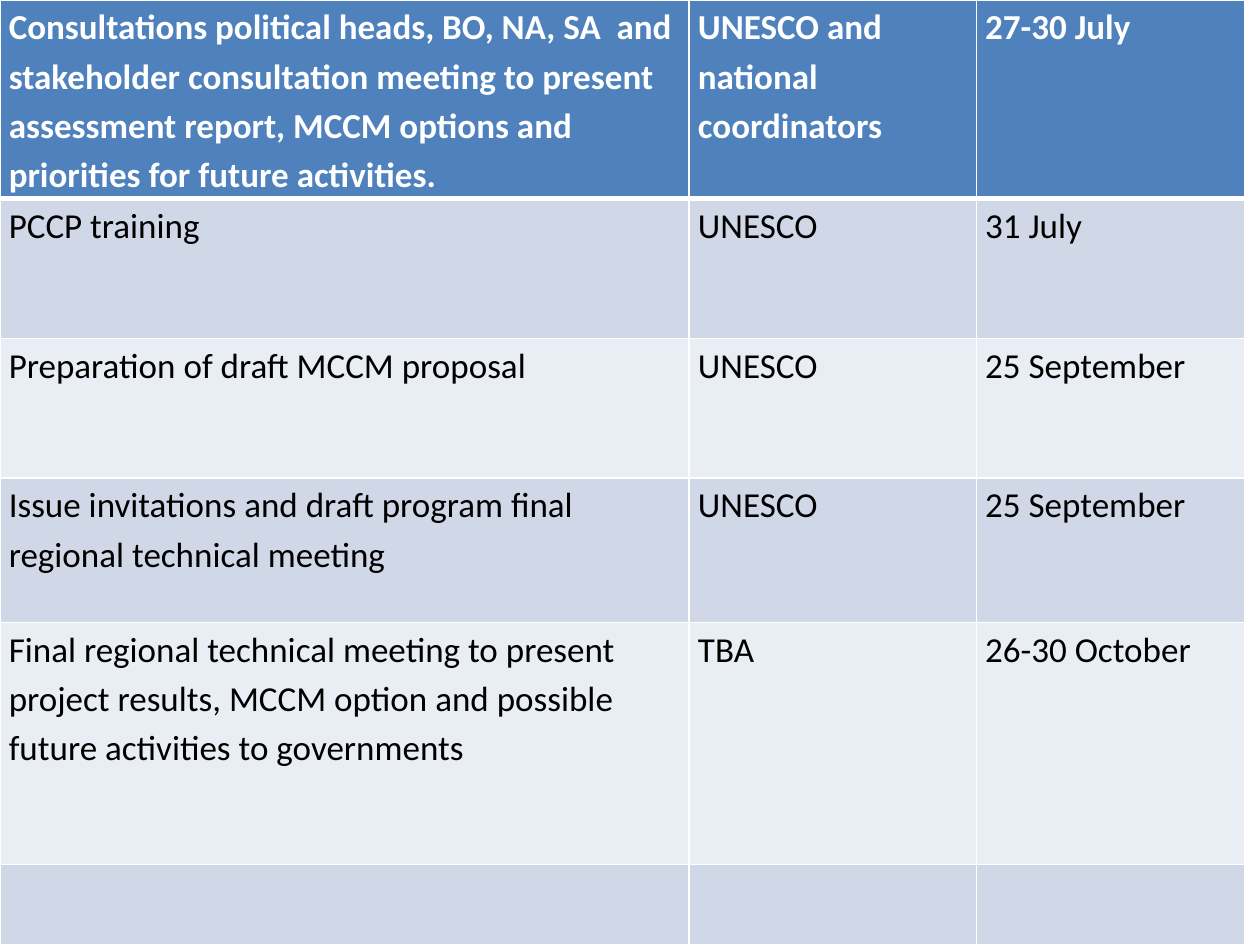
from dataclasses import dataclass

import pptx
import pptx.dml.color
import pptx.oxml
import pptx.oxml.ns
import pptx.table
import pptx.util

RGBColor = pptx.dml.color.RGBColor
WHITE = RGBColor(0xFF, 0xFF, 0xFF)
BLACK = RGBColor(0x00, 0x00, 0x00)
HEADER_BLUE = RGBColor(0x4F, 0x81, 0xBD)
BANDS = (RGBColor(0xD0, 0xD8, 0xE8), RGBColor(0xE9, 0xED, 0xF4))

SLIDE_WIDTH = pptx.util.Inches(10)
SLIDE_HEIGHT = pptx.util.Inches(7.5)
COLUMN_SHARES = (0.547, 0.228, 0.213)
SIDE_MARGIN = pptx.util.Inches(0.07)


@dataclass(frozen=True)
class Activity:
    height_share: float
    task: str = ""
    organiser: str = ""
    date: str = ""


ACTIVITIES = (
    Activity(
        0.21,
        "Consultations political heads, BO, NA, SA  and stakeholder consultation meeting "
        "to present assessment report, MCCM options and priorities for future activities.",
        "UNESCO and national coordinators",
        "27-30 July",
    ),
    Activity(0.148, "PCCP training", "UNESCO", "31 July"),
    Activity(0.148, "Preparation of draft MCCM proposal", "UNESCO", "25 September"),
    Activity(
        0.153,
        "Issue invitations and draft program final regional technical meeting",
        "UNESCO",
        "25 September",
    ),
    Activity(
        0.256,
        "Final regional technical meeting to present project results, MCCM option "
        "and possible future activities to governments",
        "TBA",
        "26-30 October",
    ),
    Activity(0.085),
)


def add_border(cell: pptx.table._Cell, side: str, points: float) -> None:
    properties = cell._tc.get_or_add_tcPr()
    properties.append(pptx.oxml.parse_xml(
        f'<a:ln{side} {pptx.oxml.ns.nsdecls("a")} w="{pptx.util.Pt(points)}">'
        f'<a:solidFill><a:srgbClr val="{WHITE}"/></a:solidFill></a:ln{side}>'
    ))


def format_cell(cell: pptx.table._Cell, text: str, row: int) -> None:
    """Style one cell; row 0 is the header and row 1 has a thick rule above it."""
    is_header = row == 0
    for side in "LRTB":
        thick = (side == "B" and is_header) or (side == "T" and row == 1)
        add_border(cell, side, 3 if thick else 1)
    cell.fill.solid()
    cell.fill.fore_color.rgb = HEADER_BLUE if is_header else BANDS[(row - 1) % 2]
    cell.margin_left = cell.margin_right = SIDE_MARGIN
    cell.margin_top = cell.margin_bottom = 0
    cell.text = text
    para = cell.text_frame.paragraphs[0]
    para.line_spacing = 1.15
    para.font.name = "Calibri"
    para.font.size = pptx.util.Pt(20)
    para.font.bold = is_header
    para.font.color.rgb = WHITE if is_header else BLACK


def add_schedule(page: pptx.slide.Slide) -> None:
    width = int(SLIDE_WIDTH * sum(COLUMN_SHARES))
    table = page.shapes.add_table(
        len(ACTIVITIES), len(COLUMN_SHARES), 0, 0, width, SLIDE_HEIGHT
    ).table
    for column, share in zip(table.columns, COLUMN_SHARES):
        column.width = int(SLIDE_WIDTH * share)
    for row, activity in enumerate(ACTIVITIES):
        table.rows[row].height = int(SLIDE_HEIGHT * activity.height_share)
        texts = (activity.task, activity.organiser, activity.date)
        for cell, text in zip(table.rows[row].cells, texts):
            format_cell(cell, text, row)


def main() -> None:
    deck = pptx.Presentation()
    deck.slide_width, deck.slide_height = SLIDE_WIDTH, SLIDE_HEIGHT
    page = deck.slides.add_slide(deck.slide_layouts[6])
    add_schedule(page)
    deck.save("out.pptx")


if __name__ == "__main__":
    main()
